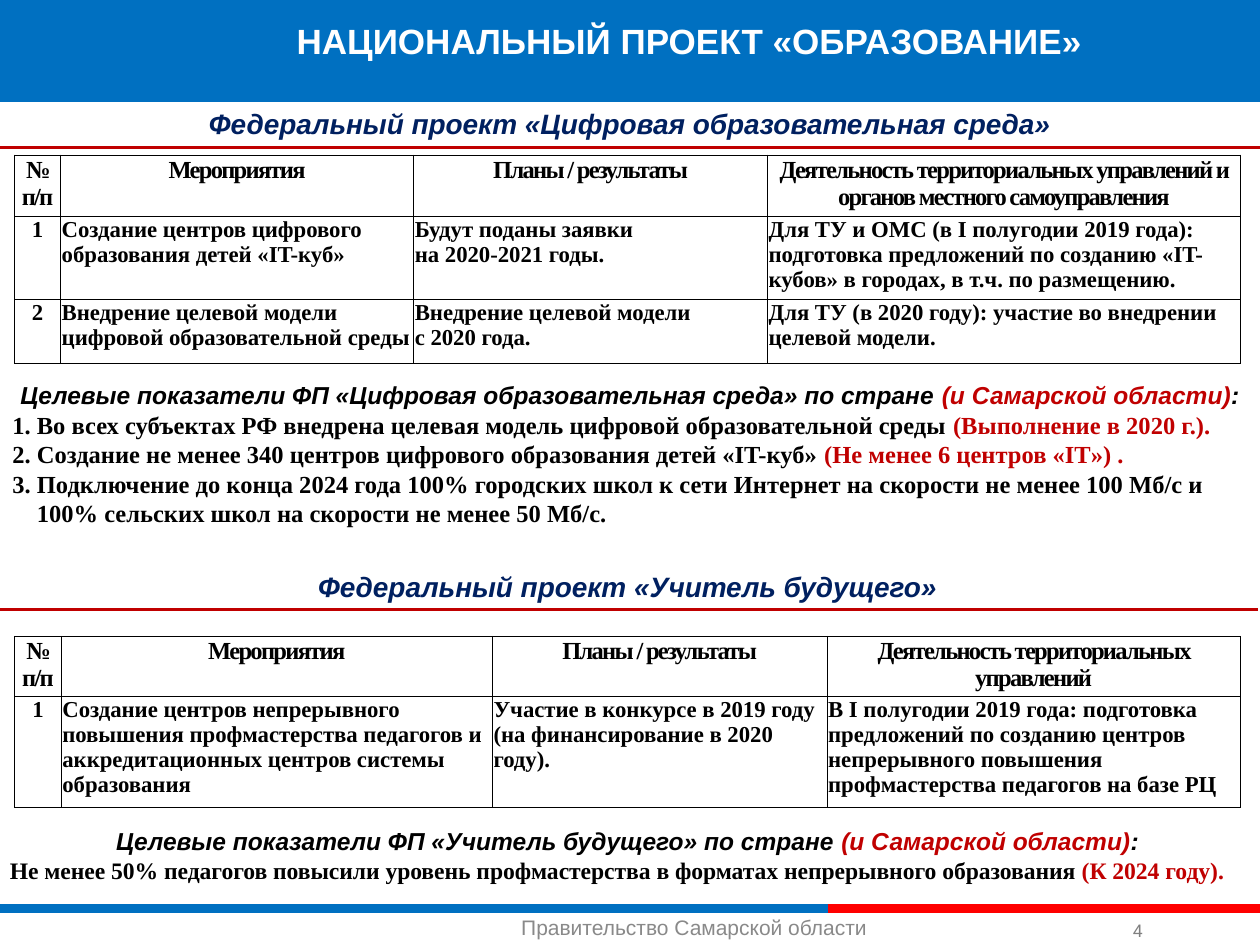
from lxml.etree import SubElement
from pptx import Presentation
from pptx.dml.color import RGBColor
from pptx.enum.shapes import MSO_CONNECTOR, MSO_SHAPE
from pptx.enum.text import MSO_ANCHOR, MSO_AUTO_SIZE, PP_ALIGN
from pptx.oxml.ns import qn
from pptx.util import Pt

BLUE, NAVY, RED, BLACK, WHITE = "0070C1", "002060", "C00000", "000000", "FFFFFF"
SERIF = "Times New Roman"
HEADS = ["№ п/п", "Мероприятия", "Планы / результаты"]


def paint(code):
    """Turn a hex string into a colour."""
    return RGBColor.from_string(code)


def write(frame, runs, new=False, size=14, font="Arial", color=BLACK, bold=False,
          italic=False, center=False, hang=0, track=0):
    """Write one paragraph, given as text or as (text, colour) runs."""
    para = frame.add_paragraph() if new else frame.paragraphs[0]
    para.alignment = PP_ALIGN.CENTER if center else PP_ALIGN.LEFT
    if hang:
        props = para._p.get_or_add_pPr()
        props.set("marL", str(Pt(hang)))
        props.set("indent", str(-Pt(hang)))
    for text, shade in [(runs, color)] if isinstance(runs, str) else runs:
        run = para.add_run()
        run.text = text
        face = run.font
        face.name, face.size, face.bold, face.italic = font, Pt(size), bold, italic
        face.color.rgb = paint(shade)
        if track:
            run._r.get_or_add_rPr().set("spc", str(track * 100))


def fit(frame, side=7.2, anchor=MSO_ANCHOR.TOP, wrap=True):
    """Set the margins, anchor and wrapping of a text frame."""
    frame.auto_size = MSO_AUTO_SIZE.NONE
    frame.word_wrap = wrap
    frame.vertical_anchor = anchor
    frame.margin_left = frame.margin_right = Pt(side)
    frame.margin_top = frame.margin_bottom = Pt(3.6)
    return frame


def area(slide, box, **layout):
    """Add a text box and return its frame."""
    return fit(slide.shapes.add_textbox(*map(Pt, box)).text_frame, **layout)


def rule(slide, x, y, width, color, weight):
    """Draw a horizontal line."""
    line = slide.shapes.add_connector(
        MSO_CONNECTOR.STRAIGHT, Pt(x), Pt(y), Pt(x + width), Pt(y))
    line.line.color.rgb = paint(color)
    line.line.width = Pt(weight)
    SubElement(line._element.spPr, qn("a:effectLst"))


def header(slide, box, text):
    """Place the blue band and the slide title on it."""
    left, top, width, height = box
    band = slide.shapes.add_shape(MSO_SHAPE.RECTANGLE, *map(Pt, box))
    band.shadow.inherit = False
    band.fill.solid()
    band.fill.fore_color.rgb = paint(BLUE)
    band.line.fill.background()
    title = slide.shapes.title
    band.element.addnext(title.element)
    title.left, title.top = Pt(left + 67.7), Pt(top + 10)
    title.width, title.height = Pt(width - 67.7), Pt(32)
    write(fit(title.text_frame, side=3.6), text, size=20, color=WHITE, bold=True, center=True)


def section(slide, box, text):
    """Place a project heading with a red rule at its bottom edge."""
    left, top, width, height = box
    write(area(slide, box), text, size=16, color=NAVY, bold=True, italic=True, center=True)
    rule(slide, left, top + height, width, RED, 2)


def border(cell):
    """Outline a table cell in thin black."""
    props = cell._tc.get_or_add_tcPr()
    for side in ("lnL", "lnR", "lnT", "lnB"):
        edge = SubElement(props, qn(f"a:{side}"), w=str(Pt(0.5)))
        SubElement(SubElement(edge, qn("a:solidFill")), qn("a:srgbClr"), val=BLACK)


def grid(slide, left, top, widths, heights, rows):
    """Place a bordered table whose first row is the heading."""
    table = slide.shapes.add_table(
        len(rows), len(widths), Pt(left), Pt(top), Pt(sum(widths)), Pt(sum(heights))).table
    table.first_row = table.horz_banding = False
    for col, width in zip(table.columns, widths):
        col.width = Pt(width)
    for i, row in enumerate(rows):
        table.rows[i].height = Pt(heights[i])
        for j, text in enumerate(row):
            cell = table.cell(i, j)
            border(cell)
            cell.fill.solid()
            cell.fill.fore_color.rgb = paint(WHITE)
            cell.margin_left = cell.margin_right = cell.margin_top = Pt(0.7)
            cell.margin_bottom = 0
            for k, part in enumerate(text.split("\n")):
                write(cell.text_frame, part, new=k > 0, size=13 if i else 14, font=SERIF,
                      bold=True, center=i == 0 or j == 0, track=0 if i else -1)


def goals(slide, box, name, items, size, hang=0):
    """Place the target indicators of a project."""
    frame = area(slide, box)
    lead = [(f"Целевые показатели ФП «{name}» по стране ", BLACK),
            ("(и Самарской области)", RED), (":", BLACK)]
    write(frame, lead, bold=True, italic=True, center=True)
    for text, note in items:
        runs = [(text, BLACK)] + ([(note, RED)] if note else [])
        write(frame, runs, new=True, size=size, font=SERIF, bold=True, hang=hang)


def footer(slide, box, text, number):
    """Place the two-colour line, the organisation and the page number."""
    left, top, width, height = box
    split = 473
    rule(slide, left, top, split, BLUE, 5)
    rule(slide, left + split, top, width - split, "FF0000", 5)
    write(area(slide, (left + 161.3, top, 470.9, height), side=3.6), text,
          size=12, color="898989", center=True)
    write(area(slide, (left + 643.7, top + 4.3, 13.7, 18), side=3.6,
               anchor=MSO_ANCHOR.BOTTOM, wrap=False),
          number, size=10, font="Roboto", color="808080")


def main():
    """Build the slide and save it."""
    deck = Presentation()
    deck.slide_width, deck.slide_height = Pt(720), Pt(540)
    slide = deck.slides.add_slide(deck.slide_layouts[5])
    digital, teacher = "Цифровая образовательная среда", "Учитель будущего"

    header(slide, (0, -2.2, 720, 60.5), "НАЦИОНАЛЬНЫЙ ПРОЕКТ «ОБРАЗОВАНИЕ»")
    section(slide, (0, 57.6, 720, 26.6), f"Федеральный проект «{digital}»")
    grid(slide, 8.4, 88.6, [26.2, 201.8, 202.2, 270.2], [34.9, 47.4, 37], [
        HEADS + ["Деятельность территориальных управлений и органов местного самоуправления"],
        ["1", "Создание центров цифрового образования детей «IT-куб»",
         "Будут поданы заявки\nна 2020-2021 годы.",
         "Для ТУ и ОМС (в I полугодии 2019 года): подготовка предложений по созданию "
         "«IT-кубов» в городах, в т.ч. по размещению."],
        ["2", "Внедрение целевой модели цифровой образовательной среды",
         "Внедрение целевой модели\nс 2020 года.",
         "Для ТУ (в 2020 году): участие во внедрении целевой модели."],
    ])
    goals(slide, (0, 213.8, 720, 92.2), digital, [
        ("1. Во всех субъектах РФ внедрена целевая модель цифровой образовательной среды ",
         "(Выполнение в 2020 г.)."),
        ("2. Создание не менее 340 центров цифрового образования детей «IT-куб» ",
         "(Не менее 6 центров «IT») ."),
        ("3. Подключение до конца 2024 года 100% городских школ к сети Интернет на скорости "
         "не менее 100 Мб/с и 100% сельских школ на скорости не менее 50 Мб/с.", ""),
    ], size=14, hang=14)

    section(slide, (-1.4, 321.8, 720, 26.6), f"Федеральный проект «{teacher}»")
    grid(slide, 8.4, 363.6, [26.6, 246.4, 191.2, 236.2], [34.3, 63.4], [
        HEADS + ["Деятельность территориальных управлений"],
        ["1", "Создание центров непрерывного повышения профмастерства педагогов и "
         "аккредитационных центров системы образования",
         "Участие в конкурсе в 2019 году (на финансирование в 2020 году).",
         "В I полугодии 2019 года: подготовка предложений по созданию центров "
         "непрерывного повышения профмастерства педагогов на базе РЦ"],
    ])
    goals(slide, (-1.4, 468.7, 720, 40.3), teacher, [
        ("Не менее 50% педагогов повысили уровень профмастерства в форматах "
         "непрерывного образования ", "(К 2024 году)."),
    ], size=13.5)
    footer(slide, (0, 519.1, 720, 20.9), "Правительство Самарской области", "4")
    deck.save("out.pptx")


if __name__ == "__main__":
    main()
